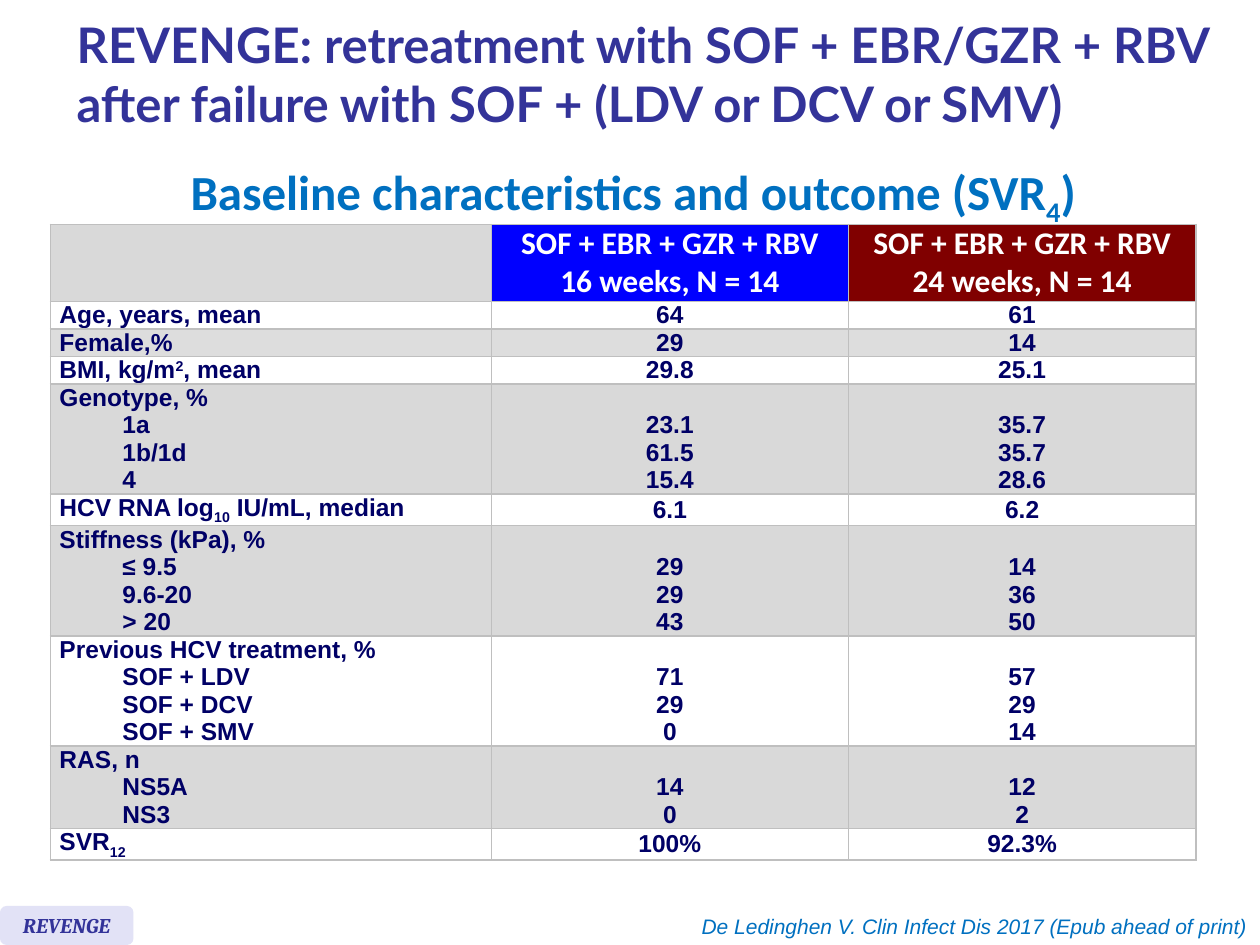
from dataclasses import dataclass

from lxml.etree import SubElement
from pptx import Presentation
from pptx.dml.color import RGBColor
from pptx.enum.shapes import MSO_SHAPE
from pptx.enum.text import MSO_ANCHOR, PP_ALIGN
from pptx.oxml.ns import qn
from pptx.util import Pt

WHITE = RGBColor(0xFF, 0xFF, 0xFF)
LIGHT_GREY = RGBColor(0xD9, 0xD9, 0xD9)
PALE_GREY = RGBColor(0xDD, 0xDD, 0xDD)
BORDER_GREY = RGBColor(0xBF, 0xBF, 0xBF)
BLUE = RGBColor(0x00, 0x00, 0xFF)
MAROON = RGBColor(0x80, 0x00, 0x00)
NAVY = RGBColor(0x00, 0x00, 0x66)
INDIGO = RGBColor(0x33, 0x33, 0x99)
LAVENDER = RGBColor(0xE2, 0xE2, 0xF6)
SKY_BLUE = RGBColor(0x00, 0x70, 0xC0)

SUPERSCRIPT, SUBSCRIPT = 30, -25
LINE_HEIGHT = 15.6
HEADER_HEIGHT = 43.2
COLUMN_WIDTHS = (252, 204, 198.6)

TITLE_FORMAT = {"name": "Lato", "size": Pt(28), "bold": True, "color": INDIGO}
SUBTITLE_FORMAT = {"name": "Calibri", "size": Pt(28), "bold": True, "color": SKY_BLUE}
HEADER_FORMAT = {"name": "Calibri", "size": Pt(18), "bold": True, "color": WHITE}
BODY_FORMAT = {"name": "Arial", "size": Pt(14), "bold": True, "color": NAVY}
TAG_FORMAT = {"name": "Cambria", "size": Pt(12), "bold": True, "italic": True, "color": INDIGO}
CITATION_FORMAT = {"name": "Arial", "size": Pt(12), "italic": True, "color": SKY_BLUE}


@dataclass(frozen=True)
class Span:
    text: str
    baseline: int = 0


@dataclass(frozen=True)
class Arm:
    lines: tuple[str, ...]
    fill: RGBColor


@dataclass(frozen=True)
class Characteristic:
    label: tuple[Span, ...]
    fill: RGBColor
    short: tuple[str, ...]
    long: tuple[str, ...]
    categories: tuple[str, ...] = ()


ARMS = (
    Arm(("SOF + EBR + GZR + RBV", "16 weeks, N = 14"), BLUE),
    Arm(("SOF + EBR + GZR + RBV", "24 weeks, N = 14"), MAROON),
)

CHARACTERISTICS = (
    Characteristic((Span("Age, years, mean"),), WHITE, ("64",), ("61",)),
    Characteristic((Span("Female,%"),), PALE_GREY, ("29",), ("14",)),
    Characteristic((Span("BMI, kg/m"), Span("2", SUPERSCRIPT), Span(", mean")),
                   WHITE, ("29.8",), ("25.1",)),
    Characteristic((Span("Genotype, %"),), LIGHT_GREY, ("23.1", "61.5", "15.4"),
                   ("35.7", "35.7", "28.6"), ("1a", "1b/1d", "4")),
    Characteristic((Span("HCV RNA log"), Span("10", SUBSCRIPT), Span(" IU/mL, median")),
                   WHITE, ("6.1",), ("6.2",)),
    Characteristic((Span("Stiffness (kPa), %"),), LIGHT_GREY, ("29", "29", "43"),
                   ("14", "36", "50"), ("≤ 9.5", "9.6-20", "> 20")),
    Characteristic((Span("Previous HCV treatment, %"),), WHITE, ("71", "29", "0"),
                   ("57", "29", "14"), ("SOF + LDV", "SOF + DCV", "SOF + SMV")),
    Characteristic((Span("RAS, n"),), LIGHT_GREY, ("14", "0"), ("12", "2"), ("NS5A", "NS3")),
    Characteristic((Span("SVR"), Span("12", SUBSCRIPT)), WHITE, ("100%",), ("92.3%",)),
)


def write_lines(frame, lines, text_format: dict, alignment=PP_ALIGN.LEFT) -> list:
    """Write one paragraph per line; a line is a string or a tuple of spans."""
    paras = []
    for index, line in enumerate(lines):
        para = frame.add_paragraph() if index else frame.paragraphs[0]
        para.alignment = alignment
        for span in (Span(line),) if isinstance(line, str) else line:
            run = para.add_run()
            run.text = span.text
            for name, value in text_format.items():
                if name == "color":
                    run.font.color.rgb = value
                else:
                    setattr(run.font, name, value)
            if span.baseline:
                run._r.get_or_add_rPr().set("baseline", str(span.baseline * 1000))
        paras.append(para)
    return paras


def add_text(page, bounds: tuple, line, text_format: dict, alignment=PP_ALIGN.LEFT,
             anchor=MSO_ANCHOR.TOP, wrap: bool = True) -> None:
    frame = page.shapes.add_textbox(*map(Pt, bounds)).text_frame
    frame.word_wrap = wrap
    frame.vertical_anchor = anchor
    write_lines(frame, [line], text_format, alignment)


def style_cell(cell, fill: RGBColor, side_margin: float, anchor=MSO_ANCHOR.MIDDLE) -> None:
    """Set margins, anchor and borders, then the fill that must follow the borders."""
    cell.margin_left = cell.margin_right = Pt(side_margin)
    cell.margin_top = cell.margin_bottom = 0
    cell.vertical_anchor = anchor
    properties = cell._tc.get_or_add_tcPr()
    for side in ("a:lnL", "a:lnR", "a:lnT", "a:lnB"):
        line = SubElement(properties, qn(side), w=str(Pt(1)))
        solid = SubElement(line, qn("a:solidFill"))
        SubElement(solid, qn("a:srgbClr"), val=str(BORDER_GREY))
    cell.fill.solid()
    cell.fill.fore_color.rgb = fill


def fill_row(table, row: int, item: Characteristic) -> None:
    table.rows[row].height = Pt(LINE_HEIGHT * (1 + len(item.categories)))
    label_cell = table.cell(row, 0)
    style_cell(label_cell, item.fill, 5.2)
    paras = write_lines(label_cell.text_frame, (item.label, *item.categories), BODY_FORMAT)
    for para in paras[1:]:
        para.level = 1
        para._p.get_or_add_pPr().set("marL", str(Pt(36)))
    anchor = MSO_ANCHOR.BOTTOM if item.categories else MSO_ANCHOR.MIDDLE
    for column, values in enumerate((item.short, item.long), start=1):
        cell = table.cell(row, column)
        style_cell(cell, item.fill, 5.2, anchor)
        write_lines(cell.text_frame, values, BODY_FORMAT, PP_ALIGN.CENTER)


def add_baseline_table(page) -> None:
    table = page.shapes.add_table(
        len(CHARACTERISTICS) + 1, len(COLUMN_WIDTHS),
        Pt(28.8), Pt(128.2), Pt(sum(COLUMN_WIDTHS)), Pt(363)).table
    table.first_row = table.horz_banding = False
    for column, width in zip(table.columns, COLUMN_WIDTHS):
        column.width = Pt(width)
    table.rows[0].height = Pt(HEADER_HEIGHT)
    style_cell(table.cell(0, 0), LIGHT_GREY, 7.2)
    for column, arm in enumerate(ARMS, start=1):
        cell = table.cell(0, column)
        style_cell(cell, arm.fill, 7.2)
        write_lines(cell.text_frame, arm.lines, HEADER_FORMAT, PP_ALIGN.CENTER)
    for row, item in enumerate(CHARACTERISTICS, start=1):
        fill_row(table, row, item)


def add_study_tag(page) -> None:
    tag = page.shapes.add_shape(MSO_SHAPE.ROUNDED_RECTANGLE, 0, Pt(517.7), Pt(76.3), Pt(22.3))
    tag.shadow.inherit = False
    tag.fill.solid()
    tag.fill.fore_color.rgb = LAVENDER
    tag.line.fill.background()
    tag.text_frame.word_wrap = False
    tag.text_frame.vertical_anchor = MSO_ANCHOR.MIDDLE
    write_lines(tag.text_frame, ["REVENGE"], TAG_FORMAT, PP_ALIGN.CENTER)


def main() -> None:
    deck = Presentation()
    deck.slide_width, deck.slide_height = Pt(720), Pt(540)
    page = deck.slides.add_slide(deck.slide_layouts[6])
    add_baseline_table(page)
    subtitle = (Span("Baseline characteristics and outcome (SVR"), Span("4", SUBSCRIPT), Span(")"))
    add_text(page, (5.8, 88.6, 712, 41), subtitle, SUBTITLE_FORMAT, PP_ALIGN.CENTER)
    add_study_tag(page)
    add_text(page, (36.7, 3.6, 669, 77),
             "REVENGE: retreatment with SOF + EBR/GZR + RBV "
             "after failure with SOF + (LDV or DCV or SMV)",
             TITLE_FORMAT, anchor=MSO_ANCHOR.MIDDLE)
    add_text(page, (387.4, 518.4, 332.6, 21.6),
             "De Ledinghen V. Clin Infect Dis 2017 (Epub ahead of print)",
             CITATION_FORMAT, PP_ALIGN.RIGHT, wrap=False)
    deck.save("out.pptx")


if __name__ == "__main__":
    main()
